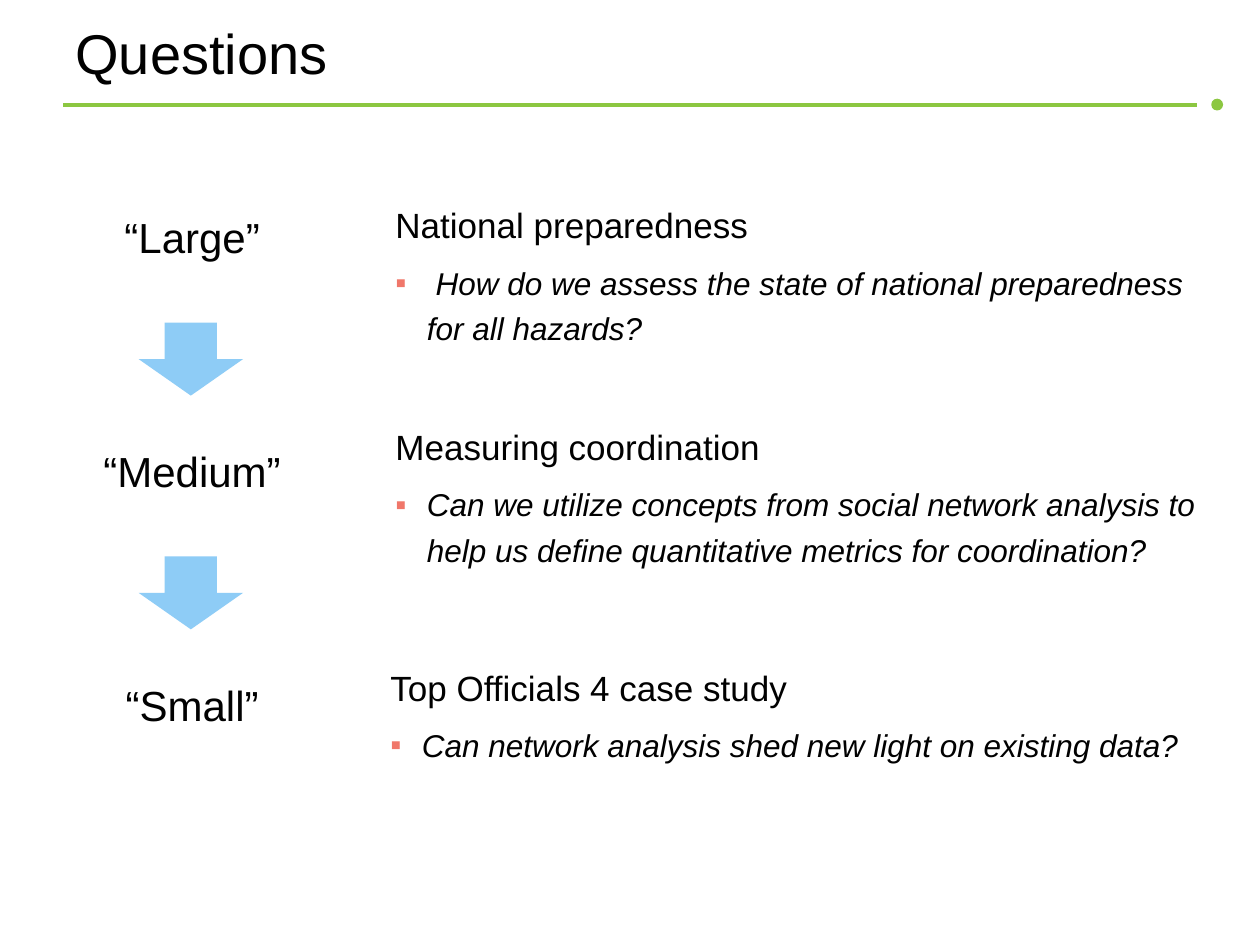
from lxml import etree
from pptx import Presentation
from pptx.dml.color import RGBColor
from pptx.enum.shapes import MSO_CONNECTOR, MSO_SHAPE
from pptx.enum.text import MSO_ANCHOR, PP_ALIGN
from pptx.oxml.ns import qn
from pptx.util import Inches, Pt

STRAIGHT = MSO_CONNECTOR.STRAIGHT
OVAL = MSO_SHAPE.OVAL
DOWN_ARROW = MSO_SHAPE.DOWN_ARROW
MIDDLE = MSO_ANCHOR.MIDDLE
TOP = MSO_ANCHOR.TOP
LEFT = PP_ALIGN.LEFT
CENTER = PP_ALIGN.CENTER

THEME = {
    "font": "Arial",
    "text": RGBColor(0x01, 0x01, 0x01),
    "rule": RGBColor(0x8C, 0xC7, 0x41),
    "arrow": RGBColor(0x8E, 0xCC, 0xF6),
    "bullet": "F0776A",
    "title": Pt(32),
    "label": Pt(24),
    "heading": Pt(20),
    "question": Pt(18),
}


def add_box(left, top, width, height, wrap=True, anchor=TOP):
    box = slide.shapes.add_textbox(Inches(left), Inches(top), Inches(width), Inches(height))
    box.text_frame.word_wrap = wrap
    box.text_frame.vertical_anchor = anchor
    return box.text_frame


def write(paragraph, text, size, italic=False, **layout):
    paragraph.text = text
    for name, value in layout.items():
        setattr(paragraph, name, value)
    font_format = {"name": THEME["font"], "size": THEME[size], "italic": italic}
    for name, value in font_format.items():
        setattr(paragraph.font, name, value)
    paragraph.font.color.rgb = THEME["text"]


presentation = Presentation()
presentation.slide_width = Inches(10)
presentation.slide_height = Inches(7.5)
slide = presentation.slides.add_slide(presentation.slide_layouts[6])

rule = slide.shapes.add_connector(STRAIGHT, Inches(0.5), Inches(0.83), Inches(9.5), Inches(0.83))
rule.line.color.rgb = THEME["rule"]
rule.line.width = Pt(2.25)
etree.SubElement(rule._element.spPr, qn("a:effectLst"))

dot = slide.shapes.add_shape(OVAL, Inches(9.62), Inches(0.79), Inches(0.08), Inches(0.08))
dot.shadow.inherit = False
dot.fill.solid()
dot.fill.fore_color.rgb = THEME["rule"]
dot.line.color.rgb = THEME["rule"]
dot.line.width = Pt(1)

title = add_box(0.5, 0, 9, 0.83, anchor=MIDDLE)
write(title.paragraphs[0], "Questions", "title", alignment=LEFT)

label_top, label_step = 1.66, 1.855
for index, (label, label_width) in enumerate([("“Large”", 1.29), ("“Medium”", 1.63), ("“Small”", 1.27)]):
    frame = add_box(1.525 - label_width / 2, label_top + index * label_step, label_width, 0.48, wrap=False)
    write(frame.paragraphs[0], label, "label", alignment=CENTER, line_spacing=0.95)

for index in range(2):
    arrow_top = label_top + 0.9 + index * label_step
    arrow = slide.shapes.add_shape(DOWN_ARROW, Inches(1.1), Inches(arrow_top), Inches(0.83), Inches(0.58))
    arrow.shadow.inherit = False
    arrow.fill.solid()
    arrow.fill.fore_color.rgb = THEME["arrow"]
    arrow.line.fill.background()

topics = [
    (3.04, 1.5, 6.55, 1.28, "National preparedness",
     " How do we assess the state of national preparedness for all hazards?"),
    (3.04, 3.26, 6.55, 1.32, "Measuring coordination",
     "Can we utilize concepts from social network analysis to help us define "
     "quantitative metrics for coordination?"),
    (3, 5.17, 6.58, 0.92, "Top Officials 4 case study",
     "Can network analysis shed new light on existing data?"),
]
for left, top, width, height, heading, question in topics:
    frame = add_box(left, top, width, height)
    write(frame.paragraphs[0], heading, "heading", line_spacing=1.2)
    paragraph = frame.add_paragraph()
    properties = paragraph._p.get_or_add_pPr()
    properties.set("marL", str(Inches(0.25)))
    properties.set("indent", str(Inches(-0.25)))
    bullet_color = etree.SubElement(properties, qn("a:buClr"))
    etree.SubElement(bullet_color, qn("a:srgbClr"), val=THEME["bullet"])
    etree.SubElement(properties, qn("a:buFont"), typeface=THEME["font"])
    etree.SubElement(properties, qn("a:buChar"), char="▪")
    write(paragraph, question, "question", italic=True, line_spacing=1.2, space_before=Pt(6))

presentation.save("out.pptx")
